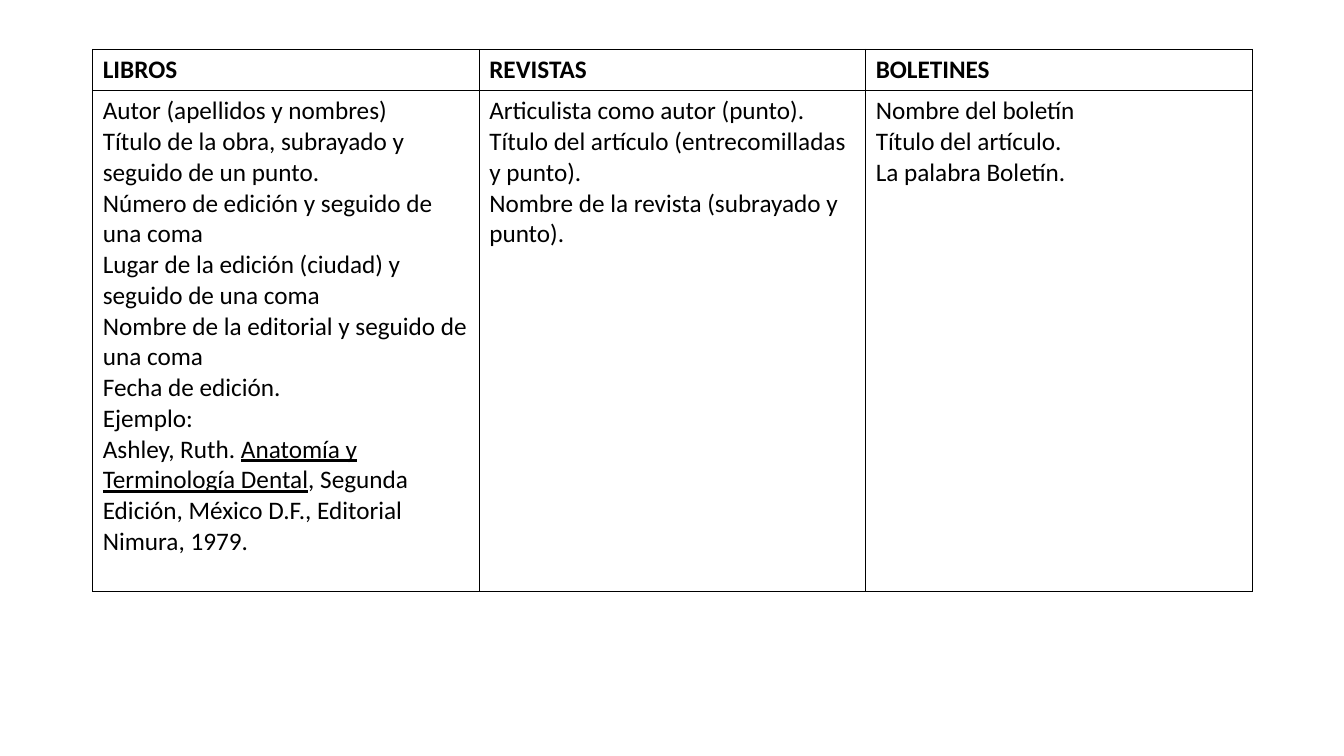
from dataclasses import dataclass

from lxml.etree import SubElement
from pptx import Presentation
from pptx.dml.color import RGBColor
from pptx.oxml.ns import qn
from pptx.util import Inches, Pt

COLORS = {"ink": "000000"}
FONT = "Calibri"
BORDERS = ("a:lnL", "a:lnR", "a:lnT", "a:lnB")


@dataclass
class Run:
    text: str
    bold: bool = False
    underline: bool = False


@dataclass
class Source:
    heading: str
    lines: list[list[Run]]


SOURCES = [
    Source("LIBROS", [
        [Run("Autor (apellidos y nombres)")],
        [Run("Título de la obra, subrayado y seguido de un punto.")],
        [Run("Número de edición y seguido de una coma")],
        [Run("Lugar de la edición (ciudad) y seguido de una coma")],
        [Run("Nombre de la editorial y seguido de una coma")],
        [Run("Fecha de edición.")],
        [Run("Ejemplo:")],
        [
            Run("Ashley, Ruth. "),
            Run("Anatomía y Terminología Dental", underline=True),
            Run(", Segunda Edición, México D.F., Editorial Nimura, 1979."),
        ],
    ]),
    Source("REVISTAS", [
        [Run("Articulista como autor (punto).")],
        [Run("Título del artículo (entrecomilladas y punto).")],
        [Run("Nombre de la revista (subrayado y punto).")],
    ]),
    Source("BOLETINES", [
        [Run("Nombre del boletín")],
        [Run("Título del artículo.")],
        [Run("La palabra Boletín.")],
    ]),
]


def add_borders(cell) -> None:
    tcPr = cell._tc.get_or_add_tcPr()
    for tag in BORDERS:
        ln = SubElement(tcPr, qn(tag), w=str(Pt(1)))
        fill = SubElement(ln, qn("a:solidFill"))
        SubElement(fill, qn("a:srgbClr"), val=COLORS["ink"])


def fill_cell(cell, lines: list[list[Run]]) -> None:
    add_borders(cell)
    cell.fill.background()
    tf = cell.text_frame
    for i, line in enumerate(lines):
        p = tf.add_paragraph() if i else tf.paragraphs[0]
        for run in line:
            r = p.add_run()
            r.text = run.text
            r.font.name = FONT
            r.font.size = Pt(18)
            r.font.bold = run.bold
            r.font.underline = run.underline
            r.font.color.rgb = RGBColor.from_string(COLORS["ink"])


def add_source_table(s, sources: list[Source]) -> None:
    frame = s.shapes.add_table(2, len(sources), Inches(0.92), Inches(0.49),
                               Inches(11.5), Inches(5.38))
    table = frame.table
    table.first_row = False
    table.horz_banding = False
    table.rows[0].height = Inches(0.41)
    table.rows[1].height = Inches(4.97)
    for col, source in enumerate(sources):
        fill_cell(table.cell(0, col), [[Run(source.heading, bold=True)]])
        fill_cell(table.cell(1, col), source.lines)


def main() -> None:
    prs = Presentation()
    prs.slide_width = Inches(13.33)
    prs.slide_height = Inches(7.5)
    s = prs.slides.add_slide(prs.slide_layouts[6])
    add_source_table(s, SOURCES)
    prs.save("out.pptx")


if __name__ == "__main__":
    main()
